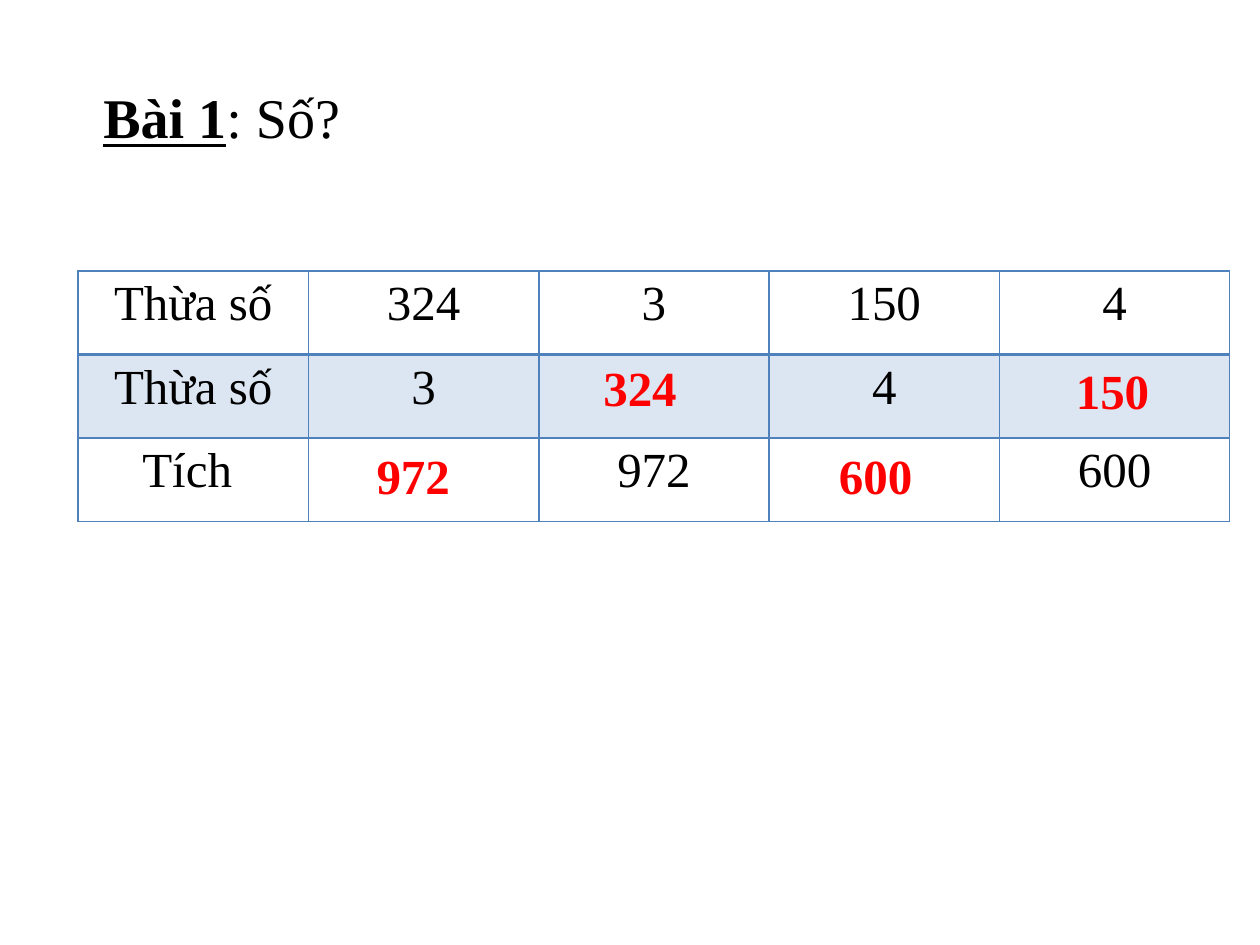
from dataclasses import dataclass

from lxml.etree import SubElement
from pptx import Presentation
from pptx.dml.color import RGBColor
from pptx.enum.text import MSO_ANCHOR, MSO_AUTO_SIZE, PP_ALIGN
from pptx.oxml.ns import qn
from pptx.util import Inches, Pt


@dataclass(frozen=True)
class Theme:
    """Colours, font and type sizes of the slide."""
    font: str = "Times New Roman"
    ink: str = "000000"
    answer: str = "FF0000"
    line: str = "4F81BD"
    band: str = "DCE6F2"
    paper: str = "FFFFFF"
    head: int = 32
    body: int = 28


THEME = Theme()
TITLE = [("Bài 1", True), (": Số?", False)]
ROWS = [
    ["Thừa số", "324", "3", "150", "4"],
    ["Thừa số", "3", "", "4", ""],
    ["Tích ", "", "972", "", "600"],
]
ANSWERS = [
    ("972", 2.27, 1.34),
    ("324", 4.07, 0.64),
    ("600", 5.94, 1.34),
    ("150", 7.82, 0.66),
]


def assign(item, values):
    """Set each attribute named in a dict."""
    for name, value in values.items():
        setattr(item, name, value)


def write(para, text, size, color, **extra):
    """Add one formatted run to a paragraph."""
    run = para.add_run()
    run.text = text
    assign(run.font, {"name": THEME.font, "size": Pt(size), **extra})
    run.font.color.rgb = RGBColor.from_string(color)


def edge(cell, widths):
    """Draw the left, right, top and bottom borders of a cell."""
    props = cell._tc.get_or_add_tcPr()
    for side, width in zip("LRTB", widths):
        line = SubElement(props, qn(f"a:ln{side}"), w=str(Pt(width)))
        fill = SubElement(line, qn("a:solidFill"))
        SubElement(fill, qn("a:srgbClr"), val=THEME.line)


def add_title(slide, left, top, width, height):
    """Place the exercise title in its box."""
    title = slide.shapes.title
    assign(title, {"left": left, "top": top, "width": width, "height": height})
    frame = title.text_frame
    assign(frame, {"vertical_anchor": MSO_ANCHOR.MIDDLE,
                   "margin_left": Inches(0.32)})
    para = frame.paragraphs[0]
    para.alignment = PP_ALIGN.LEFT
    for text, strong in TITLE:
        write(para, text, THEME.head, THEME.ink, bold=strong, underline=strong)


def add_grid(slide, left, top, width, height):
    """Place the multiplication table in its box."""
    table = slide.shapes.add_table(
        len(ROWS), len(ROWS[0]), left, top, width, height).table
    assign(table, {"first_row": False, "horz_banding": False})
    for r, row in enumerate(ROWS):
        for c, text in enumerate(row):
            cell = table.cell(r, c)
            edge(cell, (1, 1, 2 if r == 1 else 1, 2 if r == 0 else 1))
            cell.fill.solid()
            shade = THEME.band if r == 1 else THEME.paper
            cell.fill.fore_color.rgb = RGBColor.from_string(shade)
            if text:
                para = cell.text_frame.paragraphs[0]
                para.alignment = PP_ALIGN.CENTER
                write(para, text, THEME.body, THEME.ink, bold=False)


def add_answers(slide, left, top):
    """Place the red answers over the empty cells of the table."""
    for text, right, down in ANSWERS:
        box = slide.shapes.add_textbox(
            left + Inches(right), top + Inches(down), Inches(0.94), Inches(0.57))
        frame = box.text_frame
        assign(frame, {"word_wrap": True,
                       "auto_size": MSO_AUTO_SIZE.SHAPE_TO_FIT_TEXT})
        write(frame.paragraphs[0], text, THEME.body, THEME.answer, bold=True)


def main():
    """Build and save the slide."""
    deck = Presentation()
    assign(deck, {"slide_width": Inches(10), "slide_height": Inches(7.5)})
    slide = deck.slides.add_slide(deck.slide_layouts[5])
    add_title(slide, Inches(0.5), Inches(0.3), Inches(9), Inches(1.25))
    left, top = Inches(0.62), Inches(2.15)
    add_grid(slide, left, top, Inches(9.14), Inches(1.99))
    add_answers(slide, left, top)
    deck.save("out.pptx")


if __name__ == "__main__":
    main()
